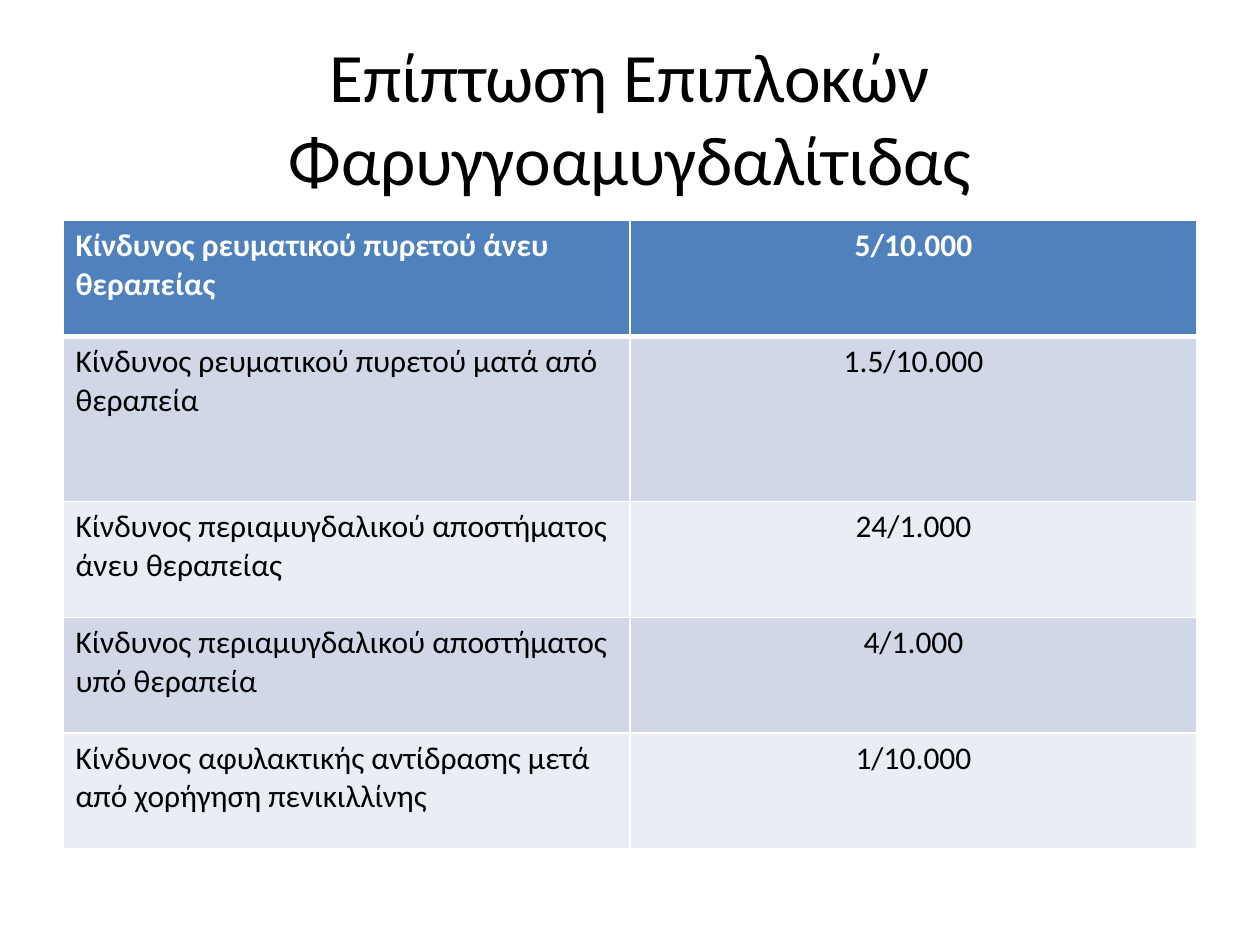
from dataclasses import dataclass

from lxml.etree import SubElement
from pptx import Presentation
from pptx.dml.color import RGBColor as RGB
from pptx.enum.text import MSO_ANCHOR as Anchor, MSO_AUTO_SIZE as AutoSize, PP_ALIGN as Align
from pptx.oxml.ns import qn
from pptx.util import Inches, Pt


@dataclass(frozen=True)
class Theme:
    font: str = "Calibri"
    title_size: float = 39.6
    body_size: float = 18
    text: str = "000000"
    light: str = "FFFFFF"
    header: str = "4F81BD"
    bands: tuple = ("D0D8E8", "E9EDF4")
    border: float = 1
    header_border: float = 3


TITLE = "Επίπτωση Επιπλοκών Φαρυγγοαμυγδαλίτιδας"
RISKS = [
    ("Κίνδυνος ρευματικού πυρετού άνευ θεραπείας", "5/10.000"),
    ("Κίνδυνος ρευματικού πυρετού ματά από θεραπεία", "1.5/10.000"),
    ("Κίνδυνος περιαμυγδαλικού αποστήματος άνευ θεραπείας", "24/1.000"),
    ("Κίνδυνος περιαμυγδαλικού αποστήματος υπό θεραπεία", "4/1.000"),
    ("Κίνδυνος αφυλακτικής αντίδρασης μετά από χορήγηση πενικιλλίνης", "1/10.000"),
]
ROW_HEIGHTS = [0.92, 1.31, 0.92, 0.92, 0.92]


def write_text(tf, text, *, font, size, color, bold=False, align=Align.LEFT):
    """Fill a text frame with one formatted paragraph."""
    p = tf.paragraphs[0]
    p.alignment = align
    r = p.add_run()
    r.text = text
    r.font.name = font
    r.font.size = Pt(size)
    r.font.bold = bold
    r.font.color.rgb = RGB.from_string(color)


def set_borders(cell, color, **widths):
    """Draw cell edges; widths maps L, R, T, B to points."""
    tc_pr = cell._tc.get_or_add_tcPr()
    for side, width in widths.items():
        ln = SubElement(tc_pr, qn(f"a:ln{side}"), w=str(Pt(width)))
        fill = SubElement(ln, qn("a:solidFill"))
        SubElement(fill, qn("a:srgbClr"), val=color)


class SlideBuilder:
    def __init__(self, slide, theme):
        self.slide = slide
        self.theme = theme

    def title(self, text, left, top, width, height):
        sp = self.slide.shapes.title
        sp.left, sp.top = Inches(left), Inches(top)
        sp.width, sp.height = Inches(width), Inches(height)
        tf = sp.text_frame
        tf.word_wrap = True
        tf.auto_size = AutoSize.NONE
        tf.vertical_anchor = Anchor.MIDDLE
        write_text(tf, text, font=self.theme.font, size=self.theme.title_size,
                   color=self.theme.text, align=Align.CENTER)

    def table(self, rows, heights, left, top, width):
        n_cols = len(rows[0])
        frame = self.slide.shapes.add_table(
            len(rows), n_cols, Inches(left), Inches(top), Inches(width), Inches(sum(heights)))
        table = frame.table
        for column in table.columns:
            column.width = Inches(width / n_cols)
        for i, (values, height) in enumerate(zip(rows, heights)):
            table.rows[i].height = Inches(height)
            for j, value in enumerate(values):
                self.cell(table.cell(i, j), value, i, j)

    def cell(self, cell, text, row, col):
        t = self.theme
        is_header = row == 0
        # The rule under the header is heavier than the others
        set_borders(cell, t.light, L=t.border, R=t.border,
                    T=t.header_border if row == 1 else t.border,
                    B=t.header_border if is_header else t.border)
        cell.fill.solid()
        fill = t.header if is_header else t.bands[(row - 1) % len(t.bands)]
        cell.fill.fore_color.rgb = RGB.from_string(fill)
        write_text(cell.text_frame, text, font=t.font, size=t.body_size,
                   color=t.light if is_header else t.text, bold=is_header,
                   align=Align.CENTER if col else Align.LEFT)


def main():
    prs = Presentation()
    prs.slide_width, prs.slide_height = Inches(10), Inches(7.5)
    title_only = prs.slide_layouts[5]
    builder = SlideBuilder(prs.slides.add_slide(title_only), Theme())

    # Heading
    builder.title(TITLE, 0.5, 0.3, 9, 1.25)
    # Risk of each complication
    builder.table(RISKS, ROW_HEIGHTS, 0.5, 1.75, 9)

    prs.save("out.pptx")


if __name__ == "__main__":
    main()
